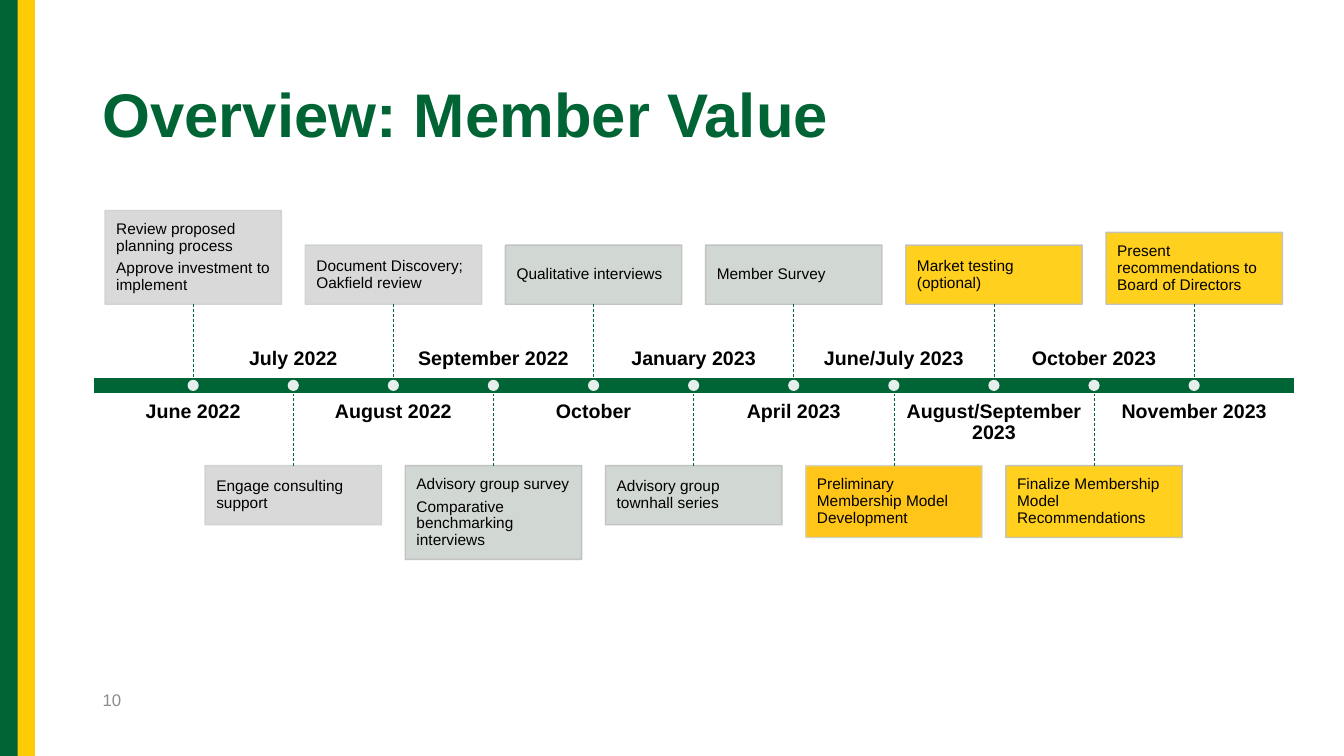
from dataclasses import dataclass

from lxml.etree import SubElement
from pptx import Presentation
from pptx.dml.color import RGBColor
from pptx.enum.dml import MSO_LINE
from pptx.enum.shapes import MSO_CONNECTOR, MSO_SHAPE
from pptx.enum.text import MSO_ANCHOR, PP_ALIGN
from pptx.oxml.ns import qn
from pptx.util import Pt


@dataclass(frozen=True)
class Theme:
    font: str = "Arial"
    green: str = "006435"
    axis_green: str = "006536"
    yellow: str = "FFCB05"
    amber: str = "FFC000"
    sage: str = "CCD3CE"
    silver: str = "D9D9D9"
    border_grey: str = "BFBFBF"
    number_grey: str = "8C8C8C"
    black: str = "000000"
    white: str = "FFFFFF"
    title_size: int = 44
    month_size: int = 14
    number_size: int = 12
    card_size: int = 11


THEME = Theme()

# Card styles: fill, fill opacity, border
DONE = (THEME.silver, 100, THEME.sage)
RESEARCH = (THEME.sage, 90, THEME.border_grey)
MODEL = (THEME.amber, 90, THEME.sage)
UPCOMING = (THEME.yellow, 90, THEME.border_grey)

# Timeline geometry in points
FIRST_X, STEP = 138, 71.5
AXIS_LEFT, AXIS_TOP, AXIS_WIDTH, AXIS_HEIGHT = 66.2, 269.3, 859, 12
DOT = 8
CARD_WIDTH, CARD_PADDING = 126, 8
UPPER_CARD_BOTTOM, LOWER_CARD_TOP = 217.4, 332.6
UPPER_MONTH_TOP, LOWER_MONTH_TOP, MONTH_HEIGHT = 229.7, 286.6, 34.6
MONTH_WIDTH, WIDE_MONTH = 114.5, 137

# Month, month width, card paragraphs, card height, style;
# cards alternate above and below the axis
MILESTONES = [
    ("June 2022", MONTH_WIDTH,
     ["Review proposed planning process", "Approve investment to implement"], 67, DONE),
    ("July 2022", MONTH_WIDTH, ["Engage consulting support"], 42.3, DONE),
    ("August 2022", MONTH_WIDTH, ["Document Discovery; Oakfield review"], 42.3, DONE),
    ("September 2022", MONTH_WIDTH,
     ["Advisory group survey", "Comparative benchmarking interviews"], 67, RESEARCH),
    ("October", MONTH_WIDTH, ["Qualitative interviews"], 42.3, RESEARCH),
    ("January 2023", MONTH_WIDTH, ["Advisory group townhall series"], 42.3, RESEARCH),
    ("April 2023", MONTH_WIDTH, ["Member Survey"], 42.3, RESEARCH),
    ("June/July 2023", MONTH_WIDTH,
     ["Preliminary Membership Model Development"], 51.4, MODEL),
    ("August/September 2023", WIDE_MONTH, ["Market testing (optional)"], 42.3, UPCOMING),
    ("October 2023", MONTH_WIDTH,
     ["Finalize Membership Model Recommendations"], 51.4, UPCOMING),
    ("November 2023", WIDE_MONTH,
     ["Present recommendations to Board of Directors"], 51.4, UPCOMING),
]


def set_opacity(fill, percent):
    color = fill._xPr.find(qn("a:solidFill"))[0]
    SubElement(color, qn("a:alpha")).set("val", str(percent * 1000))


def paint(fill, color, opacity=100):
    fill.solid()
    fill.fore_color.rgb = RGBColor.from_string(color)
    if opacity < 100:
        set_opacity(fill, opacity)


def add_block(slide, kind, left, top, width, height, color, opacity=100):
    block = slide.shapes.add_shape(kind, Pt(left), Pt(top), Pt(width), Pt(height))
    block.shadow.inherit = False
    paint(block.fill, color, opacity)
    block.line.fill.background()
    return block


def write(frame, paragraphs, size, color, bold=False, align=PP_ALIGN.LEFT,
          anchor=MSO_ANCHOR.MIDDLE, padding=None, space_after=0):
    frame.word_wrap = True
    frame.vertical_anchor = anchor
    if padding is not None:
        frame.margin_left = frame.margin_right = Pt(padding)
        frame.margin_top = frame.margin_bottom = Pt(padding)
    for index, text in enumerate(paragraphs):
        paragraph = frame.add_paragraph() if index else frame.paragraphs[0]
        paragraph.alignment = align
        paragraph.line_spacing = 0.9
        paragraph.space_after = Pt(space_after)
        run = paragraph.add_run()
        run.text = text
        run.font.name = THEME.font
        run.font.size = Pt(size)
        run.font.bold = bold
        run.font.color.rgb = RGBColor.from_string(color)


def add_text(slide, left, top, width, height, text, size, color, **options):
    box = slide.shapes.add_textbox(Pt(left), Pt(top), Pt(width), Pt(height))
    write(box.text_frame, [text], size, color, **options)


def add_axis(slide):
    axis = add_block(slide, MSO_SHAPE.RECTANGLE, AXIS_LEFT, AXIS_TOP,
                     AXIS_WIDTH, AXIS_HEIGHT, THEME.axis_green)
    paint(axis.line.fill, THEME.white)
    axis.line.width = Pt(1.5)


def add_card(slide, center, top, height, paragraphs, style):
    color, opacity, border = style
    card = add_block(slide, MSO_SHAPE.RECTANGLE, center - CARD_WIDTH / 2, top,
                     CARD_WIDTH, height, color, opacity)
    paint(card.line.fill, border, 90)
    card.line.width = Pt(1)
    write(card.text_frame, paragraphs, THEME.card_size, THEME.black,
          padding=CARD_PADDING, space_after=4)
    return card


def add_stem(slide, card, side, center, card_edge, axis_edge):
    stem = slide.shapes.add_connector(MSO_CONNECTOR.STRAIGHT, Pt(center), Pt(card_edge),
                                      Pt(center), Pt(axis_edge))
    stem.begin_connect(card, side)
    paint(stem.line.fill, THEME.axis_green)
    stem.line.width = Pt(0.5)
    stem.line.dash_style = MSO_LINE.DASH
    SubElement(stem._element.spPr, qn("a:effectLst"))


def add_milestone(slide, index, month, month_width, paragraphs, height, style):
    center = FIRST_X + index * STEP
    above = index % 2 == 0
    # Card and stem on one side of the axis
    if above:
        card = add_card(slide, center, UPPER_CARD_BOTTOM - height, height, paragraphs, style)
        add_stem(slide, card, 2, center, UPPER_CARD_BOTTOM, AXIS_TOP)
    else:
        card = add_card(slide, center, LOWER_CARD_TOP, height, paragraphs, style)
        add_stem(slide, card, 0, center, LOWER_CARD_TOP, AXIS_TOP + AXIS_HEIGHT)
    # Month on the other side
    add_text(slide, center - month_width / 2,
             LOWER_MONTH_TOP if above else UPPER_MONTH_TOP, month_width, MONTH_HEIGHT,
             month, THEME.month_size, THEME.black, bold=True, align=PP_ALIGN.CENTER,
             anchor=MSO_ANCHOR.TOP if above else MSO_ANCHOR.BOTTOM, padding=0)
    # Dot on the axis
    add_block(slide, MSO_SHAPE.OVAL, center - DOT / 2,
              AXIS_TOP + (AXIS_HEIGHT - DOT) / 2, DOT, DOT, THEME.white, 90)


def main():
    deck = Presentation()
    deck.slide_width, deck.slide_height = Pt(960), Pt(540)
    slide = deck.slides.add_slide(deck.slide_layouts[6])

    # Side bands
    for left, width, color in [(0, 15, THEME.green), (12.5, 12.5, THEME.yellow)]:
        add_block(slide, MSO_SHAPE.RECTANGLE, left, 0, width, 540, color)

    # Title and slide number
    add_text(slide, AXIS_LEFT, 31.7, 828, 104.4, "Overview: Member Value",
             THEME.title_size, THEME.green, bold=True)
    add_text(slide, AXIS_LEFT, 486.7, 216, 28.8, "10", THEME.number_size,
             THEME.number_grey, space_after=6)

    # Timeline
    add_axis(slide)
    for index, milestone in enumerate(MILESTONES):
        add_milestone(slide, index, *milestone)

    deck.save("out.pptx")


if __name__ == "__main__":
    main()
